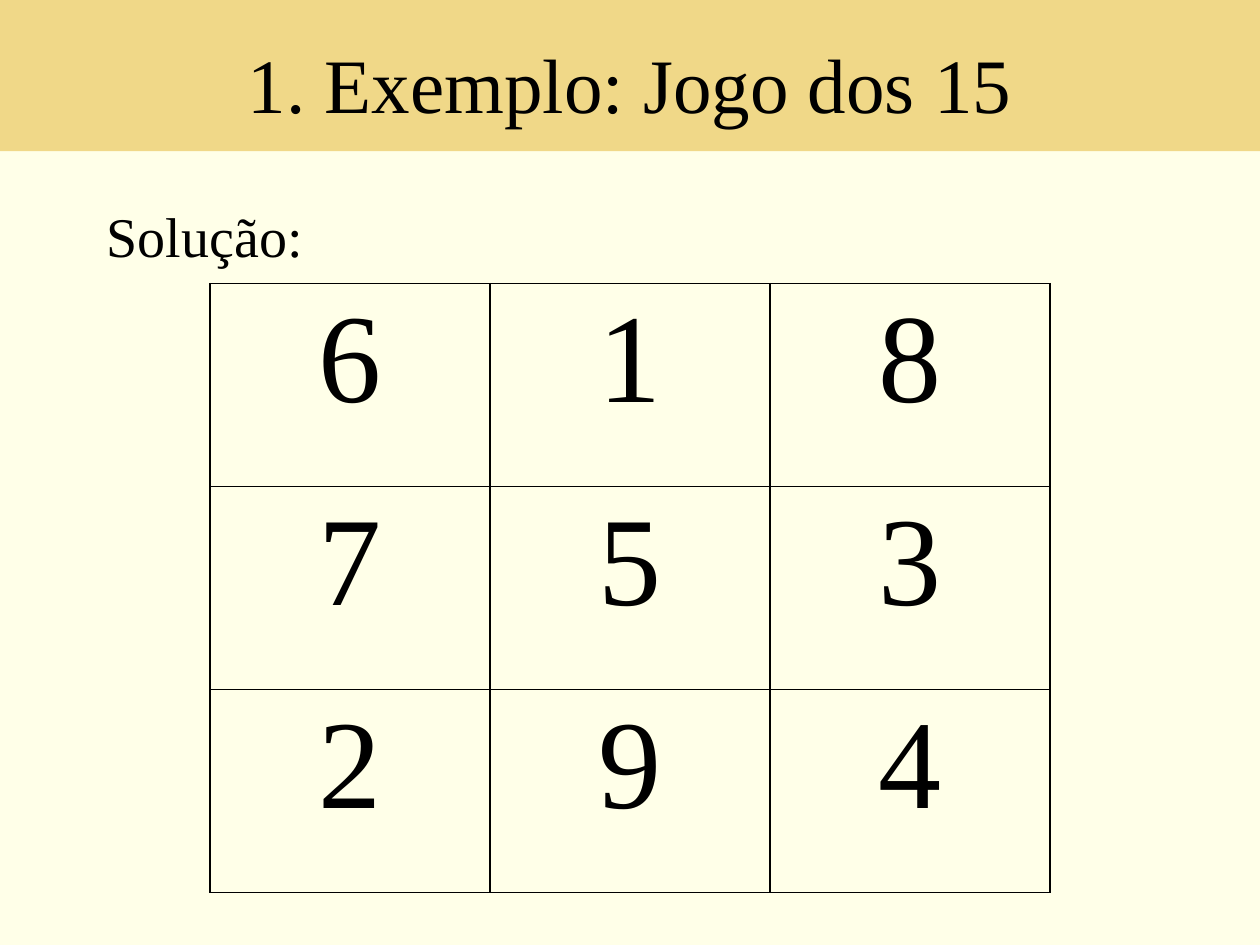
from lxml.etree import SubElement
from pptx import Presentation
from pptx.dml.color import RGBColor
from pptx.enum.shapes import MSO_SHAPE
from pptx.enum.text import MSO_ANCHOR, PP_ALIGN
from pptx.oxml.ns import qn
from pptx.util import Pt

TITLE = "1. Exemplo: Jogo dos 15"
LABEL = "Solução:"
SQUARE = [
    [6, 1, 8],
    [7, 5, 3],
    [2, 9, 4],
]
COLORS = {"background": "FFFFE8", "band": "F0D888", "ink": "000000"}
WIDTH, HEIGHT = 720, 540
CELL_WIDTH, CELL_HEIGHT = 160, 116
SQUARE_TOP = 162


def rgb(name):
    return RGBColor.from_string(COLORS[name])


def write(frame, text, size, align):
    line = frame.paragraphs[0]
    line.text = text
    line.alignment = align
    font = {"name": "Times New Roman", "size": Pt(size)}
    for key, value in font.items():
        setattr(line.runs[0].font, key, value)
    line.runs[0].font.color.rgb = rgb("ink")


def set_frame(frame, **values):
    for key, value in values.items():
        setattr(frame, key, value)


def add_borders(cell):
    properties = cell._tc.get_or_add_tcPr()
    for side in ("a:lnL", "a:lnR", "a:lnT", "a:lnB"):
        border = SubElement(properties, qn(side), w=str(Pt(1)))
        fill = SubElement(border, qn("a:solidFill"))
        SubElement(fill, qn("a:srgbClr"), val=COLORS["ink"])


deck = Presentation()
deck.slide_width, deck.slide_height = Pt(WIDTH), Pt(HEIGHT)
slide = deck.slides.add_slide(deck.slide_layouts[6])
slide.background.fill.solid()
slide.background.fill.fore_color.rgb = rgb("background")

title = slide.shapes.add_shape(MSO_SHAPE.RECTANGLE, 0, 0, Pt(WIDTH), Pt(86.4))
title.shadow.inherit = False
title.fill.solid()
title.fill.fore_color.rgb = rgb("band")
title.line.fill.background()
set_frame(title.text_frame, word_wrap=True, margin_top=Pt(11.6),
          vertical_anchor=MSO_ANCHOR.MIDDLE)
write(title.text_frame, TITLE, 44, PP_ALIGN.CENTER)

label = slide.shapes.add_textbox(Pt(54), Pt(108), Pt(612), Pt(402.5))
set_frame(label.text_frame, word_wrap=True, margin_top=Pt(7.2))
write(label.text_frame, LABEL, 32, PP_ALIGN.LEFT)

rows, columns = len(SQUARE), len(SQUARE[0])
square_width = columns * CELL_WIDTH
square = slide.shapes.add_table(
    rows, columns, Pt((WIDTH - square_width) / 2), Pt(SQUARE_TOP),
    Pt(square_width), Pt(rows * CELL_HEIGHT)).table
square.first_row = square.horz_banding = False
for column in square.columns:
    column.width = Pt(CELL_WIDTH)
for row, numbers in zip(square.rows, SQUARE):
    row.height = Pt(CELL_HEIGHT)
    for cell, number in zip(row.cells, numbers):
        add_borders(cell)
        cell.fill.background()
        write(cell.text_frame, str(number), 72, PP_ALIGN.CENTER)

deck.save("out.pptx")
